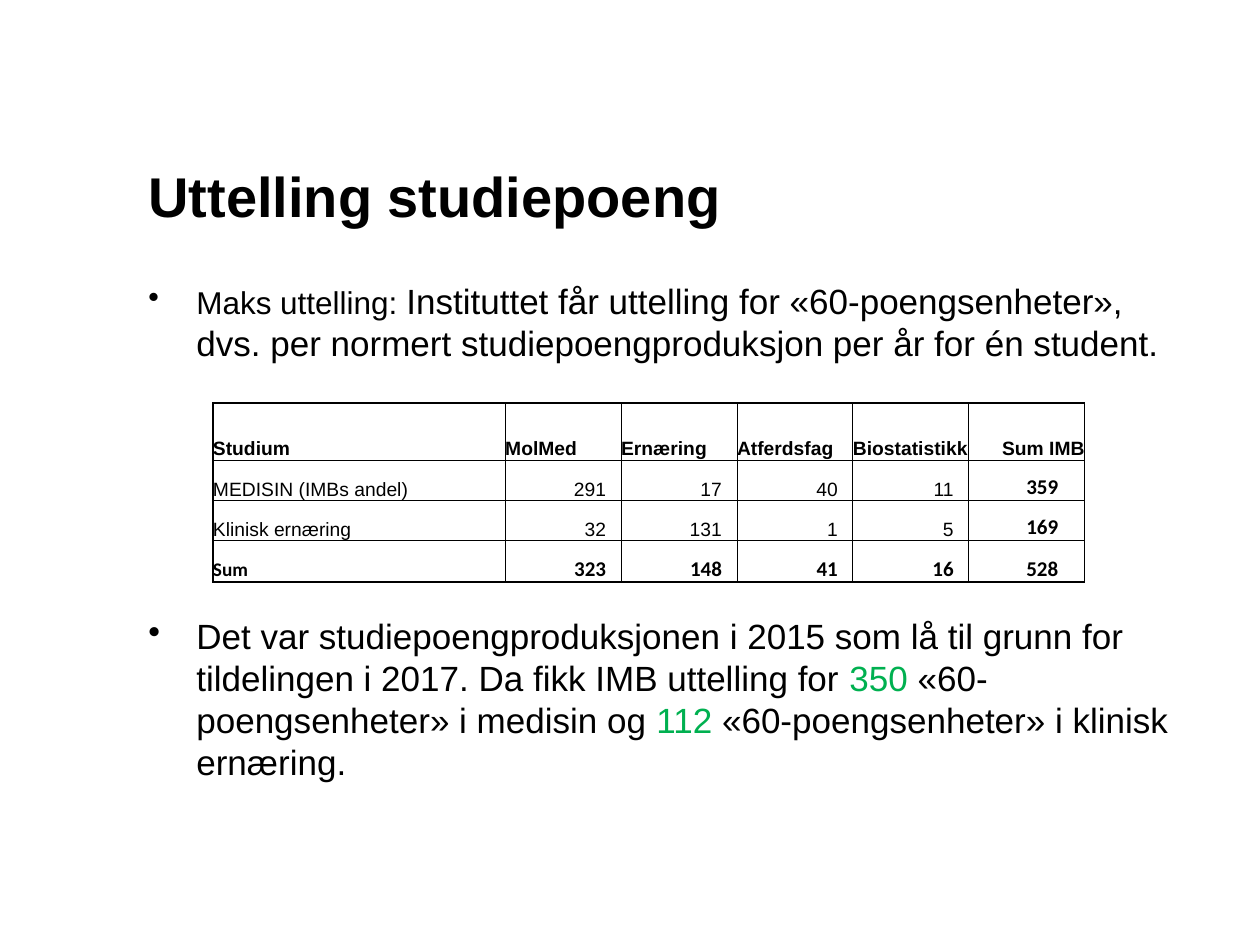
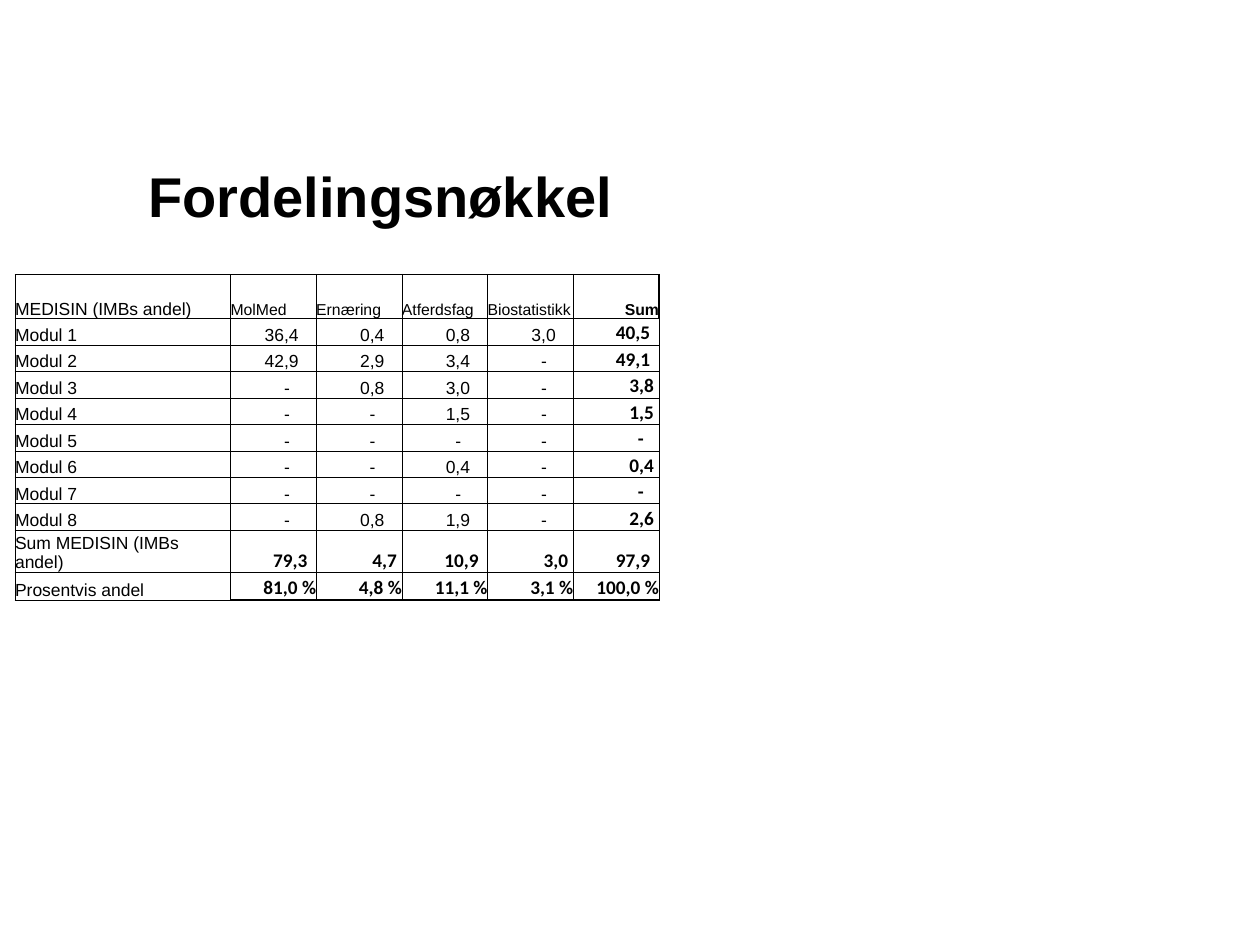
import pptx
import pptx.util
import pptx.dml.color
import pptx.enum.text
import pptx.oxml
import pptx.oxml.ns
from pptx.util import Inches

COLORS = {"text": "000000", "highlight": "00B050", "border": "000000"}
ALIGN = pptx.enum.text.PP_ALIGN
ANCHOR = pptx.enum.text.MSO_ANCHOR
LEFT, WIDTH = 1.08, 8.42
THIN, HEAVY = 0.5, 1


def write_text(paragraph, text, size=20, font="Arial", color="text", bold=False, align=ALIGN.LEFT):
    paragraph.alignment = align
    run = paragraph.add_run()
    run.text = text
    run.font.size = pptx.util.Pt(size)
    run.font.name = font
    run.font.bold = bold
    run.font.color.rgb = pptx.dml.color.RGBColor.from_string(COLORS[color])


def set_borders(cell, widths):
    properties = cell._tc.get_or_add_tcPr()
    for position, (side, width) in enumerate(widths.items()):
        line = pptx.oxml.parse_xml(
            f'<a:ln{side} {pptx.oxml.ns.nsdecls("a")} w="{int(width * 12700)}">'
            f'<a:solidFill><a:srgbClr val="{COLORS["border"]}"/></a:solidFill></a:ln{side}>')
        properties.insert(position, line)


presentation = pptx.Presentation()
presentation.slide_width = Inches(10)
presentation.slide_height = Inches(7.5)

# Slides with their titles
slides = []
for title in ("Uttelling studiepoeng", "Fordelingsnøkkel"):
    slide = presentation.slides.add_slide(presentation.slide_layouts[6])
    box = slide.shapes.add_textbox(Inches(LEFT), Inches(0.92), Inches(WIDTH), Inches(1.25))
    box.text_frame.word_wrap = True
    box.text_frame.vertical_anchor = ANCHOR.MIDDLE
    write_text(box.text_frame.paragraphs[0], title, size=32, bold=True)
    slides.append(slide)
credits_slide, key_slide = slides

# Bullets above and below the credits table
bullets = [
    (2.17, 0.9, [
        ("Maks uttelling: ", {"size": 18}),
        ("Instituttet får uttelling for «60-poengsenheter», dvs. per normert "
         "studiepoengproduksjon per år for én student.", {})]),
    (4.83, 1.84, [
        ("Det var studiepoengproduksjonen i 2015 som lå til grunn for tildelingen i 2017. "
         "Da fikk IMB uttelling for ", {}),
        ("350", {"color": "highlight"}),
        (" «60-poengsenheter» i medisin og ", {}),
        ("112 ", {"color": "highlight"}),
        ("«60-poengsenheter» i klinisk ernæring.", {})]),
]
for top, height, runs in bullets:
    box = credits_slide.shapes.add_textbox(Inches(LEFT), Inches(top), Inches(WIDTH), Inches(height))
    box.text_frame.word_wrap = True
    paragraph = box.text_frame.paragraphs[0]
    properties = paragraph._p.get_or_add_pPr()
    properties.set("marL", str(Inches(0.38)))
    properties.set("indent", str(-Inches(0.38)))
    properties.append(pptx.oxml.parse_xml(f'<a:buChar {pptx.oxml.ns.nsdecls("a")} char="•"/>'))
    paragraph.line_spacing = pptx.util.Pt(24)
    for text, text_format in runs:
        write_text(paragraph, text, **text_format)

# Table contents; margins hold the space right of a value, by its text length
departments = ["MolMed", "Ernæring", "Atferdsfag", "Biostatistikk"]
tables = [
    {
        "slide": credits_slide, "left": 1.69, "top": 3.2,
        "columns": [2.32] + [0.92] * 5, "heights": [0.45, 0.32, 0.32, 0.33],
        "first_total_row": 3, "label_size": 11, "header_size": 11, "total_size": 12,
        "bold_header": True, "framed": True,
        "margins": {}, "margin": 0.12, "sum_margins": {}, "sum_margin": 0.21,
        "rows": [
            ["Studium", *departments, "Sum IMB"],
            ["MEDISIN (IMBs andel)", "291", "17", "40", "11", "359"],
            ["Klinisk ernæring", "32", "131", "1", "5", "169"],
            ["Sum", "323", "148", "41", "16", "528"],
        ],
    },
    {
        "slide": key_slide, "left": 0.12, "top": 2.18,
        "columns": [1.71] + [0.68] * 5, "heights": [0.35] + [0.21] * 8 + [0.31, 0.22],
        "first_total_row": 9, "label_size": 10, "header_size": 9, "total_size": 11,
        "bold_header": False, "framed": False,
        "margins": {1: 0.21}, "margin": 0.14,
        "sum_margins": {1: 0.12, 3: 0.04, 4: 0.07}, "sum_margin": 0,
        "rows": [
            ["MEDISIN (IMBs andel)", *departments, "Sum"],
            ["Modul 1", "36,4", "0,4", "0,8", "3,0", "40,5"],
            ["Modul 2", "42,9", "2,9", "3,4", "-", "49,1"],
            ["Modul 3", "-", "0,8", "3,0", "-", "3,8"],
            ["Modul 4", "-", "-", "1,5", "-", "1,5"],
            ["Modul 5", "-", "-", "-", "-", "-"],
            ["Modul 6", "-", "-", "0,4", "-", "0,4"],
            ["Modul 7", "-", "-", "-", "-", "-"],
            ["Modul 8", "-", "0,8", "1,9", "-", "2,6"],
            ["Sum MEDISIN (IMBs andel)", "79,3", "4,7", "10,9", "3,0", "97,9"],
            ["Prosentvis andel", "81,0 %", "4,8 %", "11,1 %", "3,1 %", "100,0 %"],
        ],
    },
]

# Draw both tables
for data in tables:
    rows, columns, framed = data["rows"], data["columns"], data["framed"]
    last_row, last_column = len(rows) - 1, len(columns) - 1
    table = data["slide"].shapes.add_table(
        len(rows), len(columns), Inches(data["left"]), Inches(data["top"]),
        Inches(sum(columns)), Inches(sum(data["heights"]))).table
    table.first_row = table.horz_banding = False
    for column, width in enumerate(columns):
        table.columns[column].width = Inches(width)
    for row, values in enumerate(rows):
        table.rows[row].height = Inches(data["heights"][row])
        for column, text in enumerate(values):
            cell = table.cell(row, column)
            cell.fill.background()
            cell.vertical_anchor = ANCHOR.BOTTOM
            cell.margin_left = cell.margin_right = cell.margin_top = cell.margin_bottom = 0
            total_row = row >= data["first_total_row"]
            text_format = {"size": data["label_size"]}
            if row == 0:
                text_format["bold"] = data["bold_header"] or column == last_column
                if column > 0:
                    text_format["size"] = data["header_size"]
                if column == last_column:
                    text_format["align"] = ALIGN.RIGHT
            elif column > 0:
                text_format["align"] = ALIGN.RIGHT
                kind = "margin"
                if total_row or column == last_column:
                    text_format.update(size=data["total_size"], font="Calibri", bold=True)
                    if column == last_column or not framed:
                        kind = "sum_margin"
                cell.margin_right = Inches(data[kind + "s"].get(len(text), data[kind]))
            elif total_row and framed:
                text_format.update(font="Calibri", bold=True)
            write_text(cell.text_frame.paragraphs[0], text, **text_format)
            edge = framed or column > 0
            set_borders(cell, {
                "L": HEAVY if framed and column == 0 else THIN,
                "R": HEAVY if column == last_column and (framed or row == 0) else THIN,
                "T": HEAVY if edge and row == 0 else THIN,
                "B": HEAVY if edge and row == last_row else THIN,
            })

presentation.save("out.pptx")
